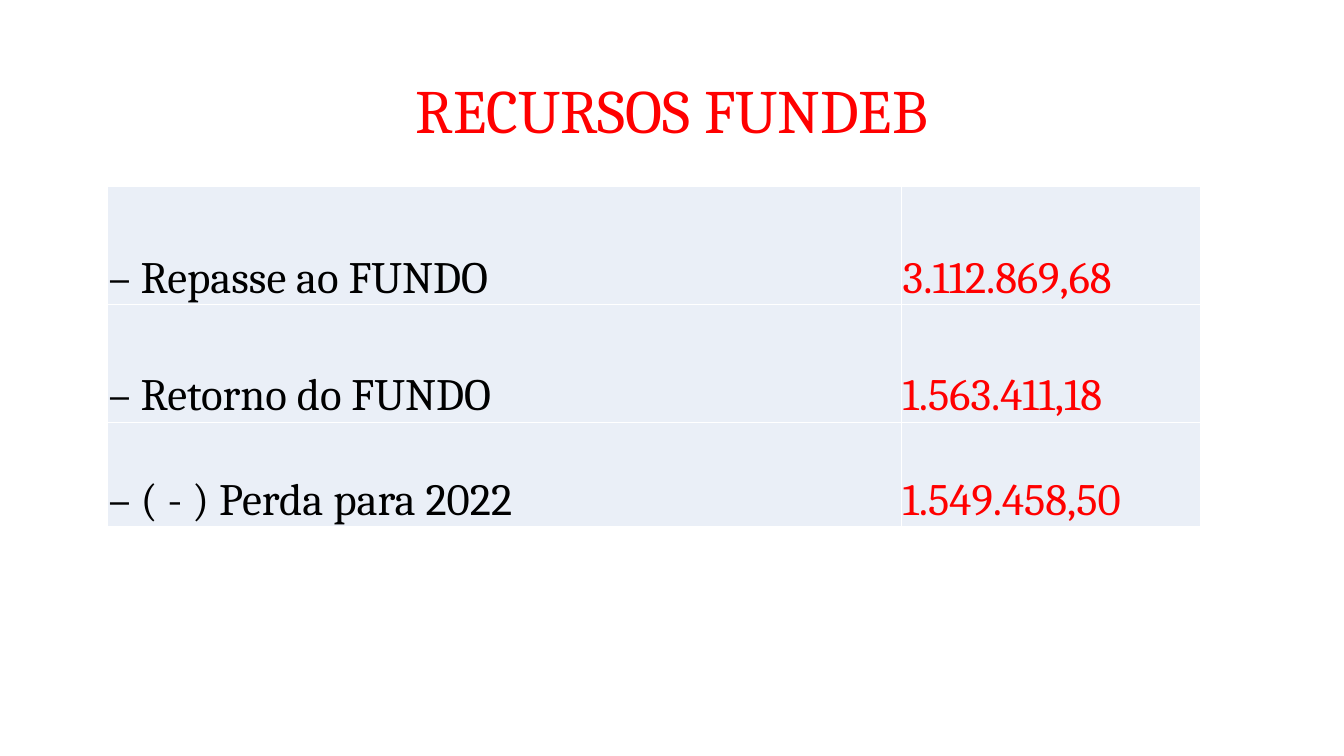
import pptx
import pptx.dml.color
import pptx.enum.text
import pptx.util
from pptx.util import Cm

FONT = "Cambria"
RED = "FF0000"
BLACK = "000000"
CELL_FILL = "EAEFF7"
COLUMN_WIDTHS = (20.02, 7.54)
ROW_HEIGHTS = (2.97, 2.97, 2.64)
FUND_ROWS = (
    ("– Repasse ao FUNDO", "3.112.869,68"),
    ("– Retorno do FUNDO", "1.563.411,18"),
    ("– ( - ) Perda para 2022", "1.549.458,50"),
)


def rgb(value):
    return pptx.dml.color.RGBColor.from_string(value)


def write_text(tf, text, size, color):
    p = tf.paragraphs[0]
    p.text = text
    p.font.name = FONT
    p.font.size = pptx.util.Pt(size)
    p.font.color.rgb = rgb(color)
    return p


def add_title(s, text):
    sp = s.shapes.add_textbox(Cm(2.33), Cm(1.01), Cm(29.21), Cm(3.68))
    tf = sp.text_frame
    tf.word_wrap = True
    tf.vertical_anchor = pptx.enum.text.MSO_ANCHOR.MIDDLE
    p = write_text(tf, text, 44, RED)
    p.alignment = pptx.enum.text.PP_ALIGN.CENTER
    p.line_spacing = 0.9


def fill_cell(cell, text, color):
    cell.fill.solid()
    cell.fill.fore_color.rgb = rgb(CELL_FILL)
    cell.vertical_anchor = pptx.enum.text.MSO_ANCHOR.BOTTOM
    cell.margin_left = cell.margin_right = cell.margin_top = Cm(0.03)
    cell.margin_bottom = Cm(0)
    write_text(cell.text_frame, text, 32, color)


def add_fund_table(s):
    table = s.shapes.add_table(
        len(FUND_ROWS), len(COLUMN_WIDTHS), Cm(2.7), Cm(4.7),
        Cm(sum(COLUMN_WIDTHS)), Cm(sum(ROW_HEIGHTS)),
    ).table
    table.first_row = False
    table.horz_banding = False
    for column, width in zip(table.columns, COLUMN_WIDTHS):
        column.width = Cm(width)
    for row, height, texts in zip(table.rows, ROW_HEIGHTS, FUND_ROWS):
        row.height = Cm(height)
        for cell, text, color in zip(row.cells, texts, (BLACK, RED)):
            fill_cell(cell, text, color)


def main():
    prs = pptx.Presentation()
    prs.slide_width = Cm(33.87)
    prs.slide_height = Cm(19.05)
    s = prs.slides.add_slide(prs.slide_layouts[6])
    add_title(s, "RECURSOS FUNDEB")
    add_fund_table(s)
    prs.save("out.pptx")


if __name__ == "__main__":
    main()
